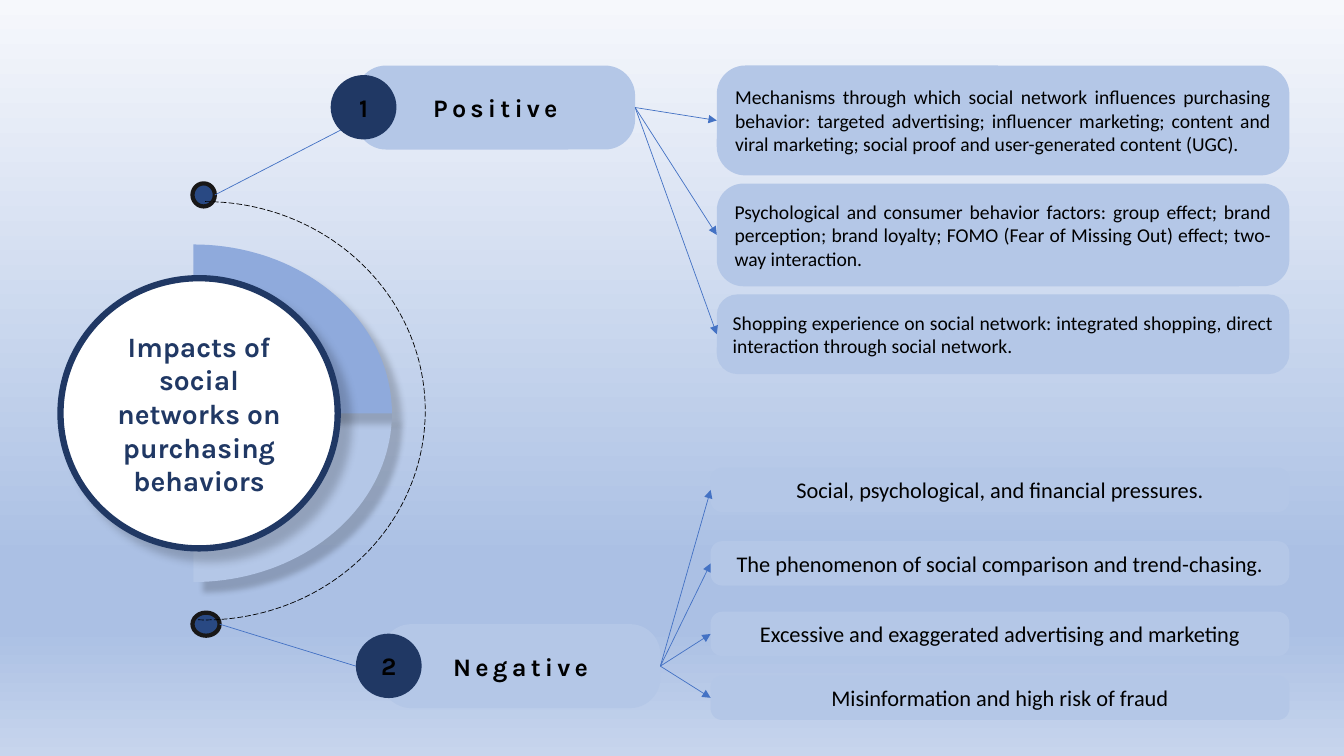
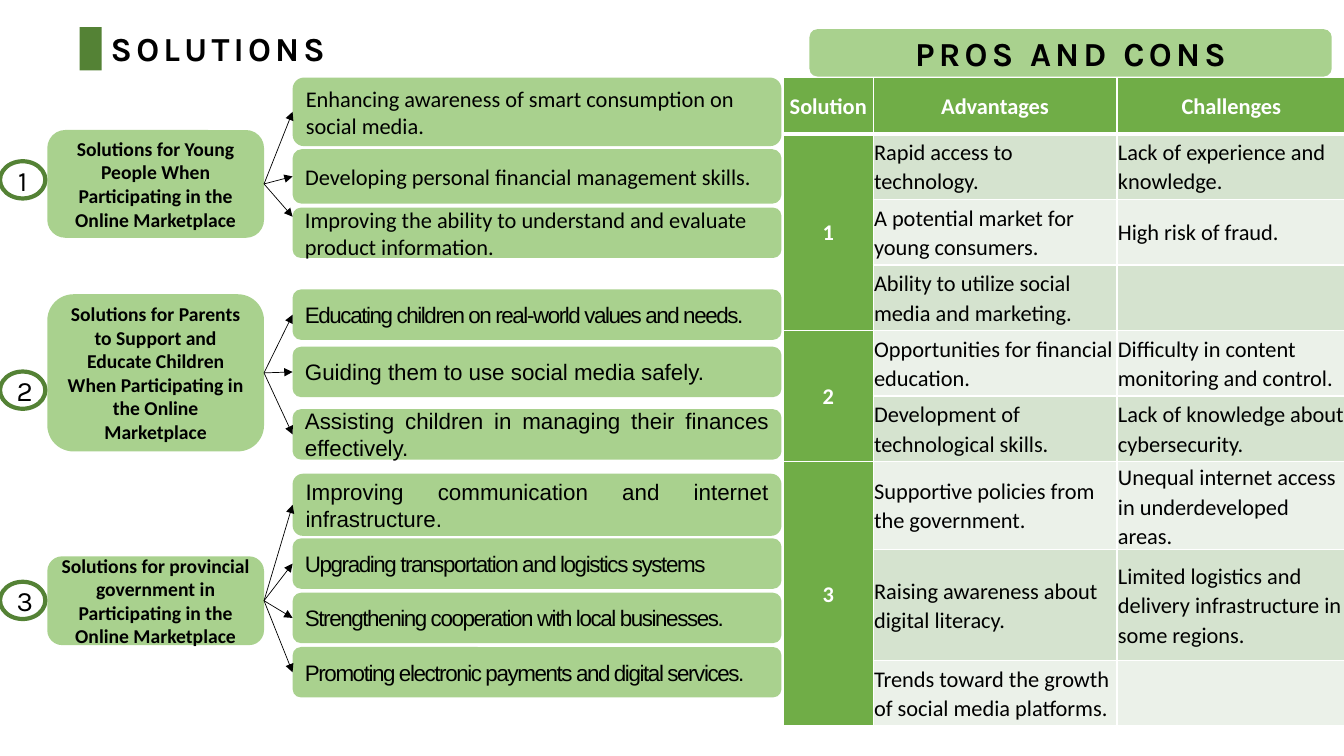
from dataclasses import dataclass
from math import cos, pi, sin
from typing import Optional

from lxml.etree import SubElement
from pptx import Presentation
from pptx.dml.color import RGBColor
from pptx.enum.dml import MSO_LINE
from pptx.enum.shapes import MSO_CONNECTOR, MSO_SHAPE
from pptx.enum.text import MSO_ANCHOR, PP_ALIGN
from pptx.oxml.ns import qn
from pptx.util import Pt

BLACK, WHITE = "000000", "FFFFFF"
NAVY, BLUE, NODE_BLUE, PALE_BLUE, MID_BLUE = "203864", "4472C4", "294983", "B4C7E7", "8FAADC"
DARK_GREEN, GREEN, PALE_GREEN = "548235", "70AD47", "A9D18E"
BANDS = ("EBF1E9", "D5E3CF")
BACKDROP = ((0, "F6F8FC"), (74, "ABC0E4"), (83, "ABC0E4"), (100, "C7D5ED"))
LEFT, CENTER, JUSTIFY = PP_ALIGN.LEFT, PP_ALIGN.CENTER, PP_ALIGN.JUSTIFY
HEADING = {"font": "Karla", "bold": True, "spacing": 3}


@dataclass
class Detail:
    """One box at the end of an arrow."""
    top: float
    height: float
    text: str
    font: str = "Calibri"
    align: PP_ALIGN = LEFT
    spacing: float = 0
    arrow_top: Optional[float] = None


def rgb(value):
    """Turn a hex string into a colour."""
    return RGBColor.from_string(value)


def write(text_frame, text, size, font="Calibri", color=BLACK, bold=False, align=CENTER, spacing=0):
    """Put one formatted paragraph into a text frame."""
    text_frame.text = text
    text_frame.word_wrap = True
    paragraph = text_frame.paragraphs[0]
    paragraph.alignment = align
    for run in paragraph.runs:
        run.font.size, run.font.name, run.font.bold = Pt(size), font, bold
        run.font.color.rgb = rgb(color)
        if spacing:
            run._r.get_or_add_rPr().set("spc", str(spacing * 100))
    return paragraph


def paint(shape, fill, line=None, width=1, shadow_blur=None):
    """Set the fill, outline and shadow of a shape."""
    shape.shadow.inherit = False
    shape.fill.solid()
    shape.fill.fore_color.rgb = rgb(fill)
    if line:
        shape.line.color.rgb = rgb(line)
        shape.line.width = Pt(width)
    else:
        shape.line.fill.background()
    if shadow_blur:
        effects = shape.element.spPr.find(qn("a:effectLst"))
        shadow = SubElement(effects, qn("a:outerShdw"), blurRad=str(Pt(shadow_blur)),
                            dist=str(Pt(10)), dir="2700000", algn="tl", rotWithShape="0")
        color = SubElement(shadow, qn("a:srgbClr"), val=BLACK)
        SubElement(color, qn("a:alpha"), val="18000")


def add_box(slide, kind, box, fill, corner=None, **style):
    """Add a painted preset shape in a box of points."""
    shape = slide.shapes.add_shape(kind, *map(Pt, box))
    paint(shape, fill, **style)
    if corner:
        shape.adjustments[0] = corner
    return shape


def link(slide, start, end, color, arrow=False):
    """Draw a line from the right of a shape, or a point, to the left of a shape, or a point."""
    joins_start, joins_end = not isinstance(start, tuple), not isinstance(end, tuple)
    begin_point = (0, 0) if joins_start else start
    end_point = (0, 0) if joins_end else end
    connector = slide.shapes.add_connector(MSO_CONNECTOR.STRAIGHT, *map(Pt, begin_point + end_point))
    if joins_start:
        connector.begin_connect(start, 3)
    if joins_end:
        connector.end_connect(end, 1)
    connector.line.color.rgb = rgb(color)
    connector.line.width = Pt(0.5)
    properties = connector.element.spPr
    if arrow:
        SubElement(properties.find(qn("a:ln")), qn("a:tailEnd"), type="triangle")
    SubElement(properties, qn("a:effectLst"))


def add_fan(slide, source, left, width, details, fill, color, size, corner=None):
    """Stack detail boxes in a column and point an arrow at each."""
    for detail in details:
        shape = add_box(slide, MSO_SHAPE.ROUNDED_RECTANGLE,
                        (left, detail.top, width, detail.height), fill, corner)
        write(shape.text_frame, detail.text, size, detail.font,
              align=detail.align, spacing=detail.spacing)
        target = (left, detail.arrow_top) if detail.arrow_top else shape
        link(slide, source, target, color, arrow=True)


def fill_backdrop(slide):
    """Give the slide its vertical gradient."""
    fill = slide.background.fill
    fill.gradient()
    fill.gradient_angle = 270
    stops = slide.element.find(".//" + qn("a:gsLst"))
    stops.clear()
    for position, color in BACKDROP:
        stop = SubElement(stops, qn("a:gs"), pos=str(position * 1000))
        SubElement(stop, qn("a:srgbClr"), val=color)


def add_quarter(slide, center, radii, direction, fill, blur):
    """Draw a right-hand quarter ellipse, upwards (-1) or downwards (1)."""
    steps = 40
    angles = [pi / 2 * step / steps for step in range(steps + 1)]
    points = [(Pt(center[0] + radii[0] * cos(angle)),
               Pt(center[1] + direction * radii[1] * sin(angle))) for angle in angles]
    builder = slide.shapes.build_freeform(Pt(center[0]), Pt(center[1]))
    builder.add_line_segments(points, close=True)
    paint(builder.convert_to_shape(), fill, shadow_blur=blur)


def add_hub(slide, left, top):
    """Draw the central topic with its arc and quarter rings."""
    arc = slide.shapes.add_shape(MSO_SHAPE.ARC, Pt(left - 54), Pt(top - 54.7), Pt(314.6), Pt(298.8))
    arc.adjustments[0], arc.adjustments[1] = 162, 55.32
    paint(arc, WHITE, BLACK, 0.5)
    arc.fill.background()
    arc.line.dash_style = MSO_LINE.LONG_DASH
    for direction, fill, blur in ((1, PALE_BLUE, 4), (-1, MID_BLUE, 5)):
        add_quarter(slide, (left + 95, top + 96.5), (141.8, 120.6), direction, fill, blur)
    circle = add_box(slide, MSO_SHAPE.OVAL, (left, top, 198, 193), WHITE,
                     line=NAVY, width=4.5, shadow_blur=6)
    write(circle.text_frame, "Impacts of social networks on purchasing behaviors",
          20, "Karla", NAVY, bold=True)


def add_branch(slide, left, top, number, label):
    """Draw a numbered branch label and return its box."""
    branch = add_box(slide, MSO_SHAPE.ROUNDED_RECTANGLE, (left, top, 199.5, 60), PALE_BLUE, 0.36)
    write(branch.text_frame, label, 18, **HEADING)
    badge = add_box(slide, MSO_SHAPE.OVAL, (left - 18, top + 6.8, 47, 46), NAVY)
    write(badge.text_frame, number, 18, "Karla", bold=True)
    return branch


def build_impacts(presentation):
    """Build the slide on positive and negative impacts."""
    slide = presentation.slides.add_slide(presentation.slide_layouts[6])
    fill_backdrop(slide)
    for box, end in (((137.5, 131, 16, 16.5), (243.4, 92.9)),
                     ((137.5, 437.6, 19.4, 16.5), (254.2, 475.8))):
        add_box(slide, MSO_SHAPE.OVAL, box, NODE_BLUE, line="181717", width=3)
        link(slide, (box[0] + box[2], box[1] + box[3] / 2), end, BLUE)
    add_hub(slide, 43.2, 198.7)

    top, gap = 46.8, 5.8
    positive = add_branch(slide, 254.2, top, "1", "Positive")
    details = []
    for height, text in (
        (78.5, "Mechanisms through which social network influences purchasing behavior: targeted "
               "advertising; influencer marketing; content and viral marketing; social proof and "
               "user-generated content (UGC)."),
        (73.4, "Psychological and consumer behavior factors: group effect; brand perception; brand "
               "loyalty; FOMO (Fear of Missing Out) effect; two-way interaction."),
        (56.9, "Shopping experience on social network: integrated shopping, direct interaction "
               "through social network."),
    ):
        details.append(Detail(top, height, text, align=JUSTIFY))
        top += height + gap
    add_fan(slide, positive, 512, 409, details, PALE_BLUE, BLUE, 14, 0.26)

    negative = add_branch(slide, 272.2, 445.8, "2", "Negative")
    details = [Detail(top, 31.7, text, align=CENTER) for top, text in (
        (334.1, "Social, psychological, and financial pressures."),
        (386.6, "The phenomenon of social comparison and trend-chasing."),
        (437, "Excessive and exaggerated advertising and marketing"),
        (482.6, "Misinformation and high risk of fraud"),
    )]
    add_fan(slide, negative, 507.6, 413.4, details, PALE_BLUE, BLUE, 16, 0.26)


AUDIENCES = (
    (92.9, 77, "Solutions for Young People When Participating in the Online Marketplace", (
        Detail(55.4, 49, "Enhancing awareness of smart consumption on social media."),
        Detail(106.6, 38.9, "Developing personal financial management skills."),
        Detail(148.3, 36, "Improving the ability to understand and evaluate product information.",
               arrow_top=154.8))),
    (210.2, 112.3, "Solutions for Parents to Support and Educate Children When Participating in "
                   "the Online Marketplace", (
        Detail(206.8, 36, "Educating children on real-world values and needs.", "Arial", JUSTIFY, -1),
        Detail(247.7, 36, "Guiding them to use social media safely.", "Arial"),
        Detail(292.3, 36, "Assisting children in managing their finances effectively.",
               "Arial", JUSTIFY))),
    (397.4, 63.4, "Solutions for provincial government in Participating in the Online Marketplace", (
        Detail(338.4, 44.4, "Improving communication and internet infrastructure.", "Arial", JUSTIFY),
        Detail(384.6, 36, "Upgrading transportation and logistics systems", "Arial", JUSTIFY, -1),
        Detail(423.4, 36, "Strengthening cooperation with local businesses.", "Arial", JUSTIFY, -1),
        Detail(462.2, 36, "Promoting electronic payments and digital services.", "Arial", LEFT, -1))),
)

PROS_AND_CONS = (
    (("Rapid access to technology.", "Lack of experience and knowledge."),
     ("A potential market for young consumers.", "High risk of fraud."),
     ("Ability to utilize social media and marketing.", "")),
    (("Opportunities for financial education.", "Difficulty in content monitoring and control."),
     ("Development of technological skills.", "Lack of knowledge about cybersecurity.")),
    (("Supportive policies from the government.", "Unequal internet access in underdeveloped areas."),
     ("Raising awareness about digital literacy.",
      "Limited logistics and delivery infrastructure in some regions."),
     ("Trends toward the growth of social media platforms.", "")),
)


def fill_cell(cell, text, row, is_head):
    """Write, border and colour one table cell."""
    cell.margin_left = cell.margin_right = cell.margin_top = cell.margin_bottom = Pt(0.7)
    cell.vertical_anchor = MSO_ANCHOR.MIDDLE
    properties = cell._tc.get_or_add_tcPr()
    for side in "LRTB":
        thick = (row, side) in ((0, "B"), (1, "T"))
        border = SubElement(properties, qn("a:ln" + side), w=str(Pt(3 if thick else 1)))
        SubElement(SubElement(border, qn("a:solidFill")), qn("a:srgbClr"), val=WHITE)
    cell.fill.solid()
    cell.fill.fore_color.rgb = rgb(GREEN if is_head else BANDS[row % 2])
    if text:
        paragraph = write(cell.text_frame, text, 16, color=WHITE if is_head else BLACK,
                          bold=is_head, align=CENTER if is_head else LEFT)
        paragraph.line_spacing = 1.07


def add_pros_and_cons(slide, left, top):
    """Add the table of advantages and challenges for each solution."""
    rows = [("Solution", "Advantages", "Challenges")]
    spans = []
    for number, pairs in enumerate(PROS_AND_CONS, 1):
        spans.append((len(rows), len(rows) + len(pairs) - 1))
        rows += [(str(number) if index == 0 else "", *pair) for index, pair in enumerate(pairs)]
    widths = (64.1, 174.2, 163.4)
    heights = [40.3] + [46.8] * 6 + [79.2, 46.8]
    table = slide.shapes.add_table(len(rows), len(widths), Pt(left), Pt(top),
                                   Pt(sum(widths)), Pt(sum(heights))).table
    for column, width in zip(table.columns, widths):
        column.width = Pt(width)
    for index, (texts, height) in enumerate(zip(rows, heights)):
        table.rows[index].height = Pt(height)
        for column, text in enumerate(texts):
            fill_cell(table.cell(index, column), text, index, index == 0 or column == 0)
    for first, last in spans:
        table.cell(first, 0).merge(table.cell(last, 0))


def build_solutions(presentation):
    """Build the slide with solutions and their pros and cons."""
    slide = presentation.slides.add_slide(presentation.slide_layouts[6])
    add_box(slide, MSO_SHAPE.RECTANGLE, (56.9, 19.4, 15.8, 31), DARK_GREEN)
    title = slide.shapes.add_textbox(Pt(72), Pt(16.6), Pt(480), Pt(36))
    write(title.text_frame, "SOLUTIONS", 24, align=LEFT, **HEADING)
    banner = add_box(slide, MSO_SHAPE.ROUNDED_RECTANGLE, (578.2, 20.9, 373, 33.8), PALE_GREEN)
    write(banner.text_frame, "PROS AND CONS", 24, **HEADING)
    for index, (top, height, text, details) in enumerate(AUDIENCES):
        audience = add_box(slide, MSO_SHAPE.ROUNDED_RECTANGLE, (33.8, top, 154.8, height), PALE_GREEN)
        write(audience.text_frame, text, 14, bold=True)
        add_fan(slide, audience, 209, 349.2, details, PALE_GREEN, BLACK, 16)
        badge = add_box(slide, MSO_SHAPE.OVAL, (0, 115.2 + 150.2 * index, 32.4, 26.6), WHITE,
                        line=DARK_GREEN, width=3)
        write(badge.text_frame, str(index + 1), 20, "Karla")
    add_pros_and_cons(slide, 559.6, 55.4)


def main():
    """Build and save the presentation."""
    presentation = Presentation()
    presentation.slide_width, presentation.slide_height = Pt(960), Pt(540)
    build_impacts(presentation)
    build_solutions(presentation)
    presentation.save("out.pptx")


if __name__ == "__main__":
    main()
